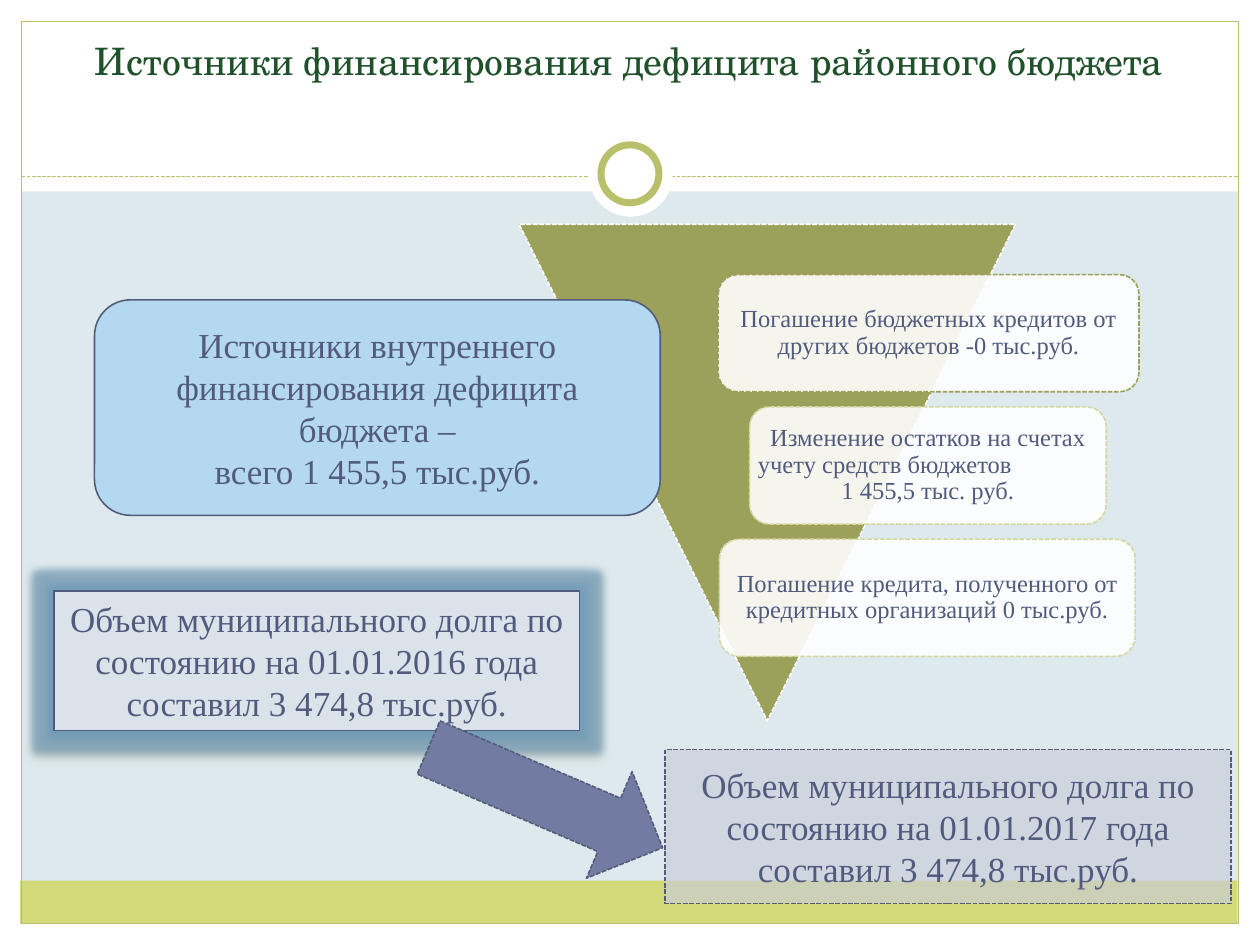
from dataclasses import dataclass
from typing import Optional

from lxml.etree import SubElement
from pptx import Presentation
from pptx.dml.color import RGBColor
from pptx.enum.dml import MSO_LINE_DASH_STYLE as Dash
from pptx.enum.shapes import MSO_CONNECTOR as Connector
from pptx.enum.shapes import MSO_SHAPE as Preset
from pptx.enum.text import MSO_ANCHOR as Anchor
from pptx.enum.text import PP_ALIGN as Align
from pptx.oxml.ns import qn
from pptx.util import Emu, Pt

SCALE = 9144
SERIF = "Times New Roman"
COLORS = {
    "background": "DDE9EC",
    "white": "FFFFFF",
    "lime": "D2DA7A",
    "frame": "B9C06C",
    "title": "1F512B",
    "olive": "9BA15A",
    "pale": "D2D89F",
    "text": "525B7E",
    "outline": "545C79",
    "sky": "B3D8EF",
    "lavender": "C7CBDA",
    "mist": "DBE3EA",
    "indigo": "727CA3",
    "glow": "6F9DBC",
    "black": "000000",
}


@dataclass(frozen=True)
class Line:
    color: str
    width: float = 0.9
    dashed: bool = False


@dataclass(frozen=True)
class Figure:
    left: int
    top: int
    width: int
    height: int
    fill: Optional[str] = None
    line: Optional[Line] = None
    preset: Preset = Preset.RECTANGLE
    opacity: int = 100
    rotation: float = 0


@dataclass(frozen=True)
class Caption:
    lines: tuple
    size: float = 20
    font: str = SERIF
    color: str = "text"
    anchor: Anchor = Anchor.MIDDLE
    inset: Optional[int] = None
    spacing: Optional[float] = None
    aligns: tuple = ()


RING = Line("frame", 4)
DASHED = Line("outline", dashed=True)
PALE = Line("pale", dashed=True)

BACKDROP = [
    Figure(0, 733, 1000, 17, "white"),
    Figure(0, 0, 1000, 152, "white"),
    Figure(0, 0, 17, 750, "white"),
    Figure(983, 0, 17, 750, "white"),
    Figure(16, 699, 966, 34, "lime"),
    Figure(17, 17, 966, 716, None, Line("frame", 0.75)),
]
RINGS = [
    Figure(467, 105, 67, 67, "white", None, Preset.OVAL),
    Figure(477, 115, 46, 46, "white", RING, Preset.OVAL),
]
TRIANGLE = Figure(412, 178, 394, 394, "olive", Line("white", dashed=True),
                  Preset.ISOSCELES_TRIANGLE, rotation=180)
ARROW = Figure(332, 587, 202, 92, "indigo", DASHED, Preset.RIGHT_ARROW, rotation=23.2)

SOURCES = [
    (570, 334, Line("olive", dashed=True),
     ("Погашение бюджетных кредитов от других бюджетов -0 тыс.руб.",), ()),
    (595, 283, PALE,
     ("Изменение остатков на счетах", "учету средств бюджетов", "1 455,5 тыс. руб."),
     (Align.CENTER, Align.LEFT, Align.CENTER)),
    (571, 330, PALE,
     ("Погашение кредита, полученного от кредитных организаций 0 тыс.руб.",), ()),
]
SOURCE_TOP, SOURCE_HEIGHT, SOURCE_STEP = 218, 93, 105

TOTAL = Figure(75, 238, 449, 171, "sky", Line("outline"), Preset.ROUNDED_RECTANGLE)
DEBT_2017 = Figure(528, 595, 449, 122, "lavender", DASHED, opacity=63)
DEBT_2016 = Figure(43, 469, 417, 111, "mist", Line("text", 0.75))


def px(value: int) -> Emu:
    """Convert slide px to EMU."""
    return Emu(value * SCALE)


def rgb(name: str) -> RGBColor:
    """Look up a named colour."""
    return RGBColor.from_string(COLORS[name])


def style_line(target, line: Line) -> None:
    """Apply colour, width and dash to an outline."""
    target.color.rgb = rgb(line.color)
    target.width = Pt(line.width)
    if line.dashed:
        target.dash_style = Dash.SQUARE_DOT


def add_alpha(color_element, percent: int) -> None:
    """Set the opacity of a colour element."""
    SubElement(color_element, qn("a:alpha"), val=str(percent * 1000))


def draw_figure(page, figure: Figure):
    """Draw one preset shape."""
    shape = page.shapes.add_shape(
        figure.preset, px(figure.left), px(figure.top), px(figure.width), px(figure.height))
    shape.shadow.inherit = False
    shape.rotation = figure.rotation
    if figure.fill:
        shape.fill.solid()
        shape.fill.fore_color.rgb = rgb(figure.fill)
        if figure.opacity < 100:
            add_alpha(shape.fill._xPr.find(qn("a:solidFill"))[0], figure.opacity)
    else:
        shape.fill.background()
    if figure.line:
        style_line(shape.line, figure.line)
    else:
        shape.line.fill.background()
    return shape


def write_caption(shape, caption: Caption) -> None:
    """Write the caption's paragraphs into a shape."""
    frame = shape.text_frame
    frame.word_wrap = True
    frame.vertical_anchor = caption.anchor
    if caption.inset is not None:
        frame.margin_left = frame.margin_right = px(caption.inset)
        frame.margin_top = frame.margin_bottom = px(caption.inset)
    aligns = caption.aligns or (Align.CENTER,) * len(caption.lines)
    for index, (line, align) in enumerate(zip(caption.lines, aligns)):
        para = frame.add_paragraph() if index else frame.paragraphs[0]
        para.text = line
        para.alignment = align
        para.line_spacing = caption.spacing
        para.font.size = Pt(caption.size)
        para.font.name = caption.font
        para.font.color.rgb = rgb(caption.color)


def draw_divider(page) -> None:
    """Draw the dashed line below the title."""
    divider = page.shapes.add_connector(Connector.STRAIGHT, px(17), px(140), px(983), px(140))
    style_line(divider.line, Line("frame", 0.75, True))
    SubElement(divider._element.spPr, qn("a:effectLst"))


def add_halo(shape) -> None:
    """Give a shape a blue glow and a soft lower shadow."""
    effects = shape._element.spPr.find(qn("a:effectLst"))
    glow = SubElement(effects, qn("a:glow"), rad=str(Pt(8)))
    shadow = SubElement(effects, qn("a:outerShdw"), blurRad=str(Pt(4)), dist=str(Pt(2)),
                        dir="5400000", rotWithShape="0")
    for effect, color, opacity in ((glow, "glow", 60), (shadow, "black", 35)):
        add_alpha(SubElement(effect, qn("a:srgbClr"), val=COLORS[color]), opacity)


def debt_caption(year: int, anchor: Anchor) -> Caption:
    """Build the debt statement for a year."""
    return Caption((f"Объем муниципального долга по состоянию на 01.01.{year} года "
                    "составил 3 474,8 тыс.руб.",), anchor=anchor)


def main() -> None:
    """Build and save the deck."""
    deck = Presentation()
    deck.slide_width, deck.slide_height = px(1000), px(750)
    page = deck.slides.add_slide(deck.slide_layouts[6])
    page.background.fill.solid()
    page.background.fill.fore_color.rgb = rgb("background")

    for figure in BACKDROP:
        draw_figure(page, figure)
    draw_divider(page)
    for figure in RINGS:
        draw_figure(page, figure)
    title = page.shapes.add_textbox(px(33), px(25), px(933), px(83))
    write_caption(title, Caption(("Источники финансирования дефицита районного бюджета",),
                                 21.6, "TeX Gyre Schola", "title", Anchor.TOP))

    draw_figure(page, TRIANGLE)
    for row, (left, width, line, lines, aligns) in enumerate(SOURCES):
        box = draw_figure(page, Figure(left, SOURCE_TOP + row * SOURCE_STEP, width, SOURCE_HEIGHT,
                                       "white", line, Preset.ROUNDED_RECTANGLE, 90))
        write_caption(box, Caption(lines, 14, inset=2, spacing=0.9, aligns=aligns))

    write_caption(draw_figure(page, TOTAL), Caption((
        "Источники внутреннего финансирования дефицита бюджета –", "всего 1 455,5 тыс.руб.")))
    write_caption(draw_figure(page, DEBT_2017), debt_caption(2017, Anchor.MIDDLE))
    debt_box = draw_figure(page, DEBT_2016)
    write_caption(debt_box, debt_caption(2016, Anchor.TOP))
    add_halo(debt_box)
    draw_figure(page, ARROW)
    deck.save("out.pptx")


if __name__ == "__main__":
    main()
